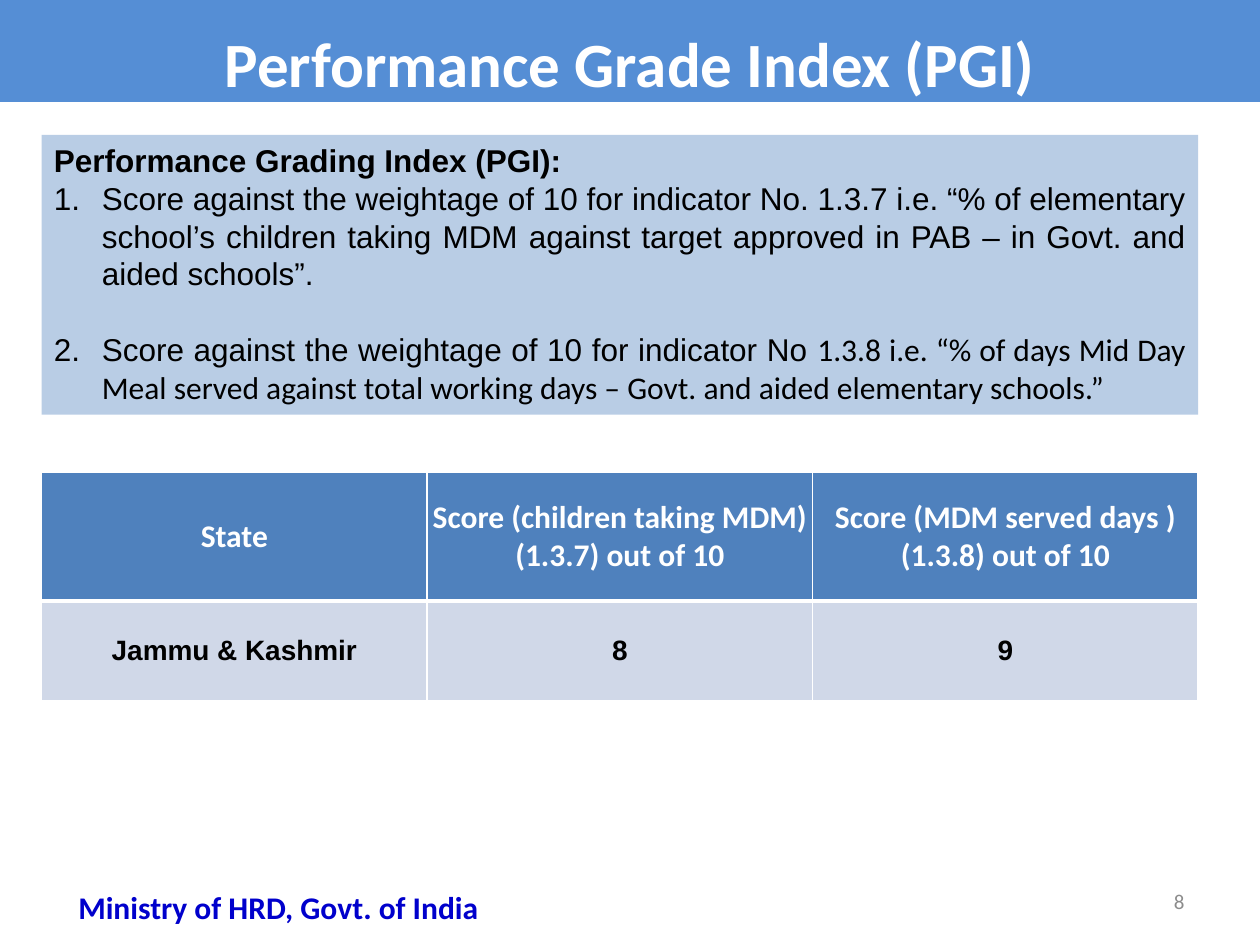
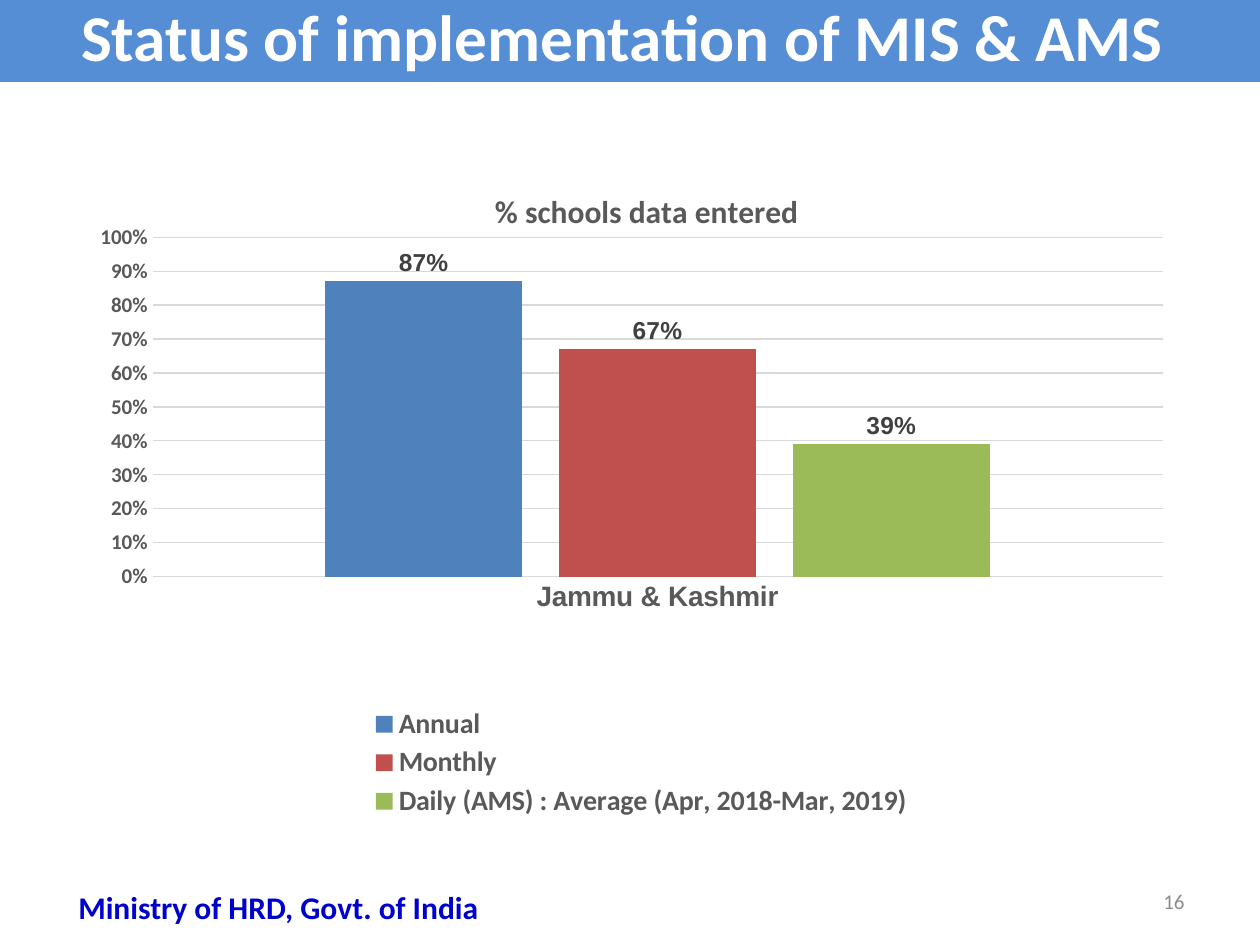
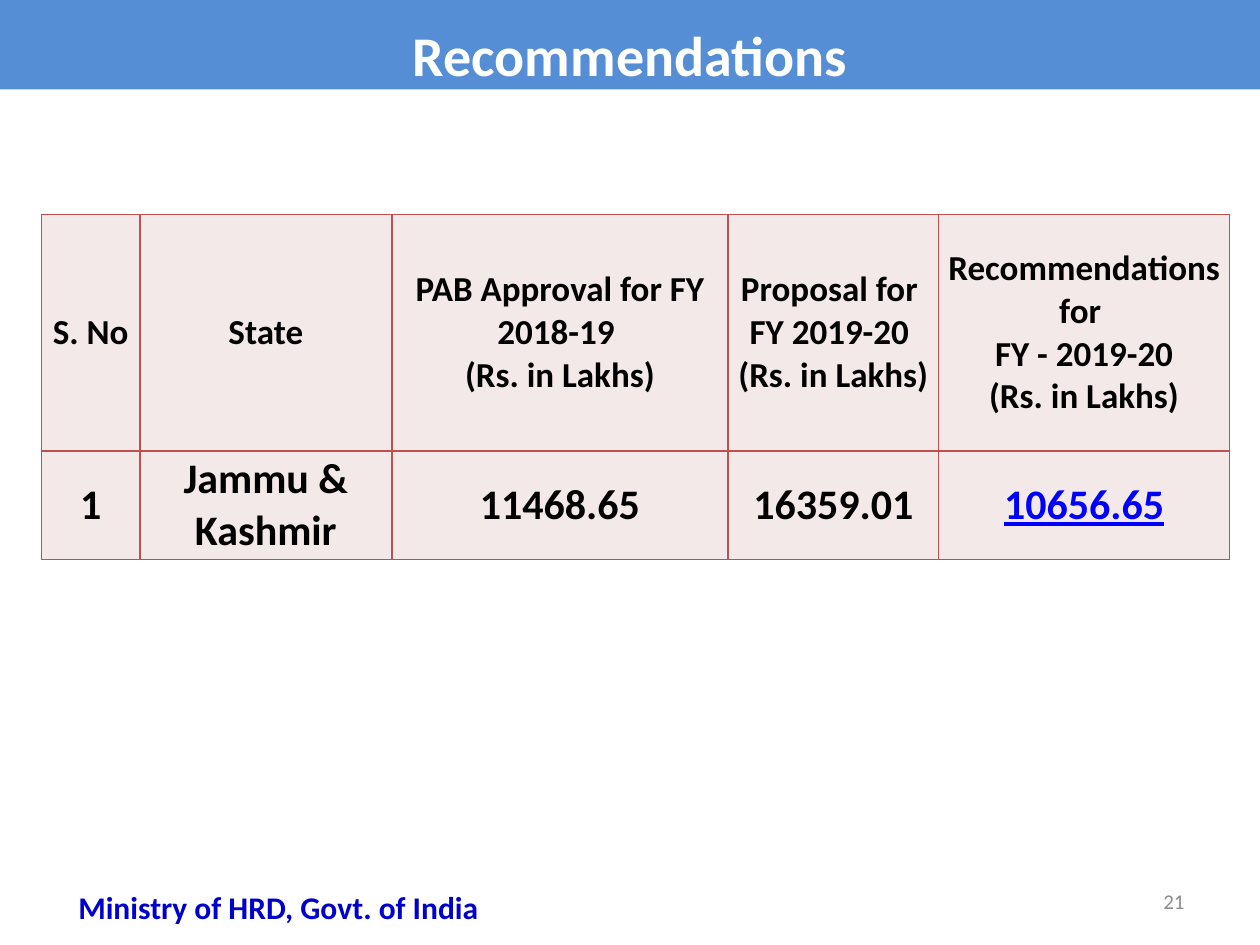
"""Build three slides on school meal scores, data entry and recommendations."""
from dataclasses import dataclass
from typing import Any, NamedTuple

import pptx
import pptx.chart.data
import pptx.dml.color
import pptx.enum.chart
import pptx.enum.shapes
import pptx.enum.text
import pptx.oxml
import pptx.oxml.ns
import pptx.util

COLORS = {
    "band": "558ED5", "panel": "B9CDE5", "white": "FFFFFF", "black": "000000",
    "footer": "0000CC", "number": "8C8C8C", "link": "0000FF",
    "blue": "4F81BD", "red": "C0504D", "green": "9BBB59",
    "score": "D0D8E8", "rose": "F4E9E9",
    "chart_text": "595959", "label": "404040", "grid": "D9D9D9",
}
WIDTH, HEIGHT = pptx.util.Inches(10), pptx.util.Inches(7.5)
ALIGN = pptx.enum.text.PP_ALIGN
ANCHOR = pptx.enum.text.MSO_ANCHOR
TIGHT, ROOMY = 0.72, 5
STATE = "Jammu & Kashmir"


class Box(NamedTuple):
    """Place and size in percent of the slide."""
    left: float
    top: float
    width: float
    height: float


class Style(NamedTuple):
    """Look of a run of text."""
    size: float
    color: str = "black"
    bold: bool = True
    font: str = "Calibri"
    underline: bool = False


class Run(NamedTuple):
    """Text with its style."""
    text: str
    style: Style


@dataclass(frozen=True)
class Paragraph:
    """Runs with their paragraph settings."""
    runs: tuple[Run, ...]
    align: Any = ALIGN.CENTER
    line_spacing: float = 1.0
    space_before: float = 0
    numbered: bool = False


@dataclass(frozen=True)
class Cell:
    """Table cell, one paragraph per line."""
    lines: tuple[str, ...]
    style: Style
    fill: str
    borders: tuple[float, float, float, float] = (1, 1, 1, 1)
    inset: float = TIGHT


@dataclass(frozen=True)
class Series:
    """One column of the chart."""
    name: str
    value: float
    color: str


def across(percent: float) -> int:
    """Turn a share of the slide width into a length."""
    return round(WIDTH * percent / 100)


def down(percent: float) -> int:
    """Turn a share of the slide height into a length."""
    return round(HEIGHT * percent / 100)


def place(box: Box) -> tuple[int, int, int, int]:
    """Turn a box into lengths."""
    return across(box.left), down(box.top), across(box.width), down(box.height)


def rgb(name: str) -> pptx.dml.color.RGBColor:
    """Look up a colour."""
    return pptx.dml.color.RGBColor.from_string(COLORS[name])


def paint(fill: Any, color: str) -> None:
    """Give a fill one solid colour."""
    fill.solid()
    fill.fore_color.rgb = rgb(color)


def apply_style(font: Any, style: Style) -> None:
    """Apply a text style to a font."""
    font.name, font.size, font.bold = style.font, pptx.util.Pt(style.size), style.bold
    font.color.rgb = rgb(style.color)
    if style.underline:
        font.underline = True


def write(frame: Any, paragraphs: list[Paragraph], anchor: Any) -> None:
    """Fill a text frame run by run."""
    frame.word_wrap = True
    frame.vertical_anchor = anchor
    for index, content in enumerate(paragraphs):
        paragraph = frame.add_paragraph() if index else frame.paragraphs[0]
        paragraph.alignment = content.align
        paragraph.line_spacing = content.line_spacing
        paragraph.space_before = pptx.util.Pt(content.space_before)
        if content.numbered:
            properties = paragraph._p.get_or_add_pPr()
            indent = across(3.8)
            properties.set("marL", str(indent))
            properties.set("indent", str(-indent))
            number = pptx.oxml.parse_xml(
                f'<a:buAutoNum {pptx.oxml.ns.nsdecls("a")} type="arabicPeriod"/>')
            properties.append(number)
        for item in content.runs:
            run = paragraph.add_run()
            run.text = item.text
            apply_style(run.font, item.style)


def add_panel(slide: Any, box: Box, color: str, paragraphs: list[Paragraph], anchor: Any) -> None:
    """Draw a filled rectangle with text."""
    shape = slide.shapes.add_shape(pptx.enum.shapes.MSO_SHAPE.RECTANGLE, *place(box))
    shape.shadow.inherit = False
    paint(shape.fill, color)
    shape.line.fill.background()
    write(shape.text_frame, paragraphs, anchor)


def add_label(slide: Any, box: Box, text: str, style: Style, align: Any, anchor: Any) -> None:
    """Draw a line of plain text."""
    shape = slide.shapes.add_textbox(*place(box))
    write(shape.text_frame, [Paragraph((Run(text, style),), align)], anchor)


def start_slide(presentation: Any, title: str, band: Box, size: float,
                number: int, line_spacing: float = 1.0) -> Any:
    """Add a slide with title band, footer and page number."""
    slide = presentation.slides.add_slide(presentation.slide_layouts[6])
    heading = Paragraph((Run(title, Style(size, "white")),), line_spacing=line_spacing)
    add_panel(slide, band, "band", [heading], ANCHOR.MIDDLE)
    add_label(slide, Box(71.7, 92.67, 23.3, 5.33), str(number),
              Style(12, "number", False), ALIGN.RIGHT, ANCHOR.MIDDLE)
    add_label(slide, Box(2.5, 93.33, 39.2, 5.33), "Ministry of HRD, Govt. of India",
              Style(18, "footer"), ALIGN.CENTER, ANCHOR.TOP)
    return slide


def add_borders(cell: Any, widths: tuple[float, ...], color: str) -> None:
    """Draw left, right, top and bottom borders of a cell."""
    properties = cell._tc.get_or_add_tcPr()
    for index, (side, width) in enumerate(zip("LRTB", widths)):
        properties.insert(index, pptx.oxml.parse_xml(
            f'<a:ln{side} {pptx.oxml.ns.nsdecls("a")} w="{pptx.util.Pt(width)}">'
            f'<a:solidFill><a:srgbClr val="{COLORS[color]}"/></a:solidFill></a:ln{side}>'))


def add_table(slide: Any, left: float, top: float, columns: list[float],
              rows: list[float], cells: list[list[Cell]], border: str) -> None:
    """Draw a table from column and row shares."""
    box = Box(left, top, sum(columns), sum(rows))
    table = slide.shapes.add_table(len(rows), len(columns), *place(box)).table
    table.first_row = table.horz_banding = False
    for column, share in zip(table.columns, columns):
        column.width = across(share)
    for row, share, contents in zip(table.rows, rows, cells):
        row.height = down(share)
        for cell, content in zip(row.cells, contents):
            cell.margin_left = cell.margin_right = pptx.util.Pt(content.inset)
            cell.margin_top = cell.margin_bottom = 0
            lines = [Paragraph((Run(line, content.style),)) for line in content.lines]
            write(cell.text_frame, lines, ANCHOR.MIDDLE)
            cell.vertical_anchor = ANCHOR.MIDDLE
            paint(cell.fill, content.fill)
            add_borders(cell, content.borders, border)


def set_layout(chart: Any, part: str, index: int, **shares: float) -> None:
    """Fix the place of a chart part in shares of the chart."""
    parent = chart._chartSpace.xpath(f"c:chart/c:{part}")[0]
    for old in parent.xpath("c:layout"):
        parent.remove(old)
    target = '<c:layoutTarget val="inner"/>' if part == "plotArea" else ""
    modes = "".join(f'<c:{key}Mode val="edge"/>' for key in "xy")
    values = "".join(f'<c:{key} val="{value}"/>' for key, value in shares.items())
    parent.insert(index, pptx.oxml.parse_xml(
        f'<c:layout {pptx.oxml.ns.nsdecls("c")}><c:manualLayout>'
        f"{target}{modes}{values}</c:manualLayout></c:layout>"))


def add_column_chart(slide: Any, box: Box, title: str, series: list[Series]) -> None:
    """Draw the chart of data entered."""
    data = pptx.chart.data.CategoryChartData(number_format="0%")
    data.categories = [STATE]
    for item in series:
        data.add_series(item.name, [item.value])
    chart = slide.shapes.add_chart(
        pptx.enum.chart.XL_CHART_TYPE.COLUMN_CLUSTERED, *place(box), data).chart
    apply_style(chart.font, Style(10, bold=False))

    chart.has_title = True
    run = chart.chart_title.text_frame.paragraphs[0].add_run()
    run.text = title
    apply_style(run.font, Style(18, "chart_text"))
    chart.chart_title.include_in_layout = False
    chart.has_legend = True
    chart.legend.position = pptx.enum.chart.XL_LEGEND_POSITION.BOTTOM
    chart.legend.include_in_layout = False
    apply_style(chart.legend.font, Style(16, "chart_text"))

    values, categories = chart.value_axis, chart.category_axis
    values.minimum_scale, values.maximum_scale, values.major_unit = 0, 1, 0.1
    values.tick_labels.number_format = "0%"
    values.tick_labels.number_format_is_linked = False
    values.format.line.fill.background()
    apply_style(values.tick_labels.font, Style(12, "chart_text"))
    apply_style(categories.tick_labels.font, Style(16, "chart_text", font="Arial"))
    for axis in (values, categories):
        axis.major_tick_mark = pptx.enum.chart.XL_TICK_MARK.NONE
    for line in (values.major_gridlines.format.line, categories.format.line):
        line.color.rgb = rgb("grid")
        line.width = pptx.util.Pt(0.75)

    plot = chart.plots[0]
    plot.gap_width, plot.overlap, plot.vary_by_categories = 176, -19, False
    for column, item in zip(plot.series, series):
        paint(column.format.fill, item.color)
        labels = column.data_labels
        labels.show_value = True
        labels.number_format, labels.number_format_is_linked = "0%", False
        labels.position = pptx.enum.chart.XL_LABEL_POSITION.OUTSIDE_END
        apply_style(labels.font, Style(14, "label", font="Arial"))

    set_layout(chart, "plotArea", 0, x=0.05, y=0.12, w=0.93, h=0.51)
    set_layout(chart, "title", 1, x=0.36, y=0.04)
    set_layout(chart, "legend", 1, x=0.23, y=0.82, w=0.54, h=0.18)


def build_index_slide(presentation: Any) -> None:
    """Build the grade index slide."""
    slide = start_slide(presentation, "Performance Grade Index (PGI)",
                        Box(0, -0.8, 100, 11.6), 36, 8, 1.4)
    plain = Style(18, bold=False, font="Arial")
    add_panel(slide, Box(3.3, 14.27, 91.8, 29.6), "panel", [
        Paragraph((Run("Performance Grading Index (PGI): ", Style(18, font="Arial")),),
                  ALIGN.JUSTIFY),
        Paragraph((Run("Score against the weightage of 10 for indicator No. 1.3.7 i.e. "
                       "“% of elementary school’s children taking MDM against target "
                       "approved in PAB – in Govt. and aided schools”.", plain),),
                  ALIGN.JUSTIFY, numbered=True),
        Paragraph((Run("Score against the weightage of 10 for indicator No ", plain),
                   Run("1.3.8 i.e. “% of days Mid Day Meal served against total working "
                       "days – Govt. and aided elementary schools.”", Style(18, bold=False))),
                  ALIGN.JUSTIFY, space_before=21.5, numbered=True),
    ], ANCHOR.TOP)
    headings = [("State",),
                ("Score (children taking MDM)", "(1.3.7) out of 10"),
                ("Score (MDM served days )", "(1.3.8) out of 10")]
    cells = [
        [Cell(lines, Style(18, "white"), "blue", (1, 1, 1, 3)) for lines in headings],
        [Cell((text,), Style(16, font="Arial"), "score", (1, 1, 3, 1))
         for text in (STATE, "8", "9")],
    ]
    add_table(slide, 3.3, 50, [30.6] * 3, [13.6, 10.53], cells, "white")


def build_status_slide(presentation: Any) -> None:
    """Build the data entry slide."""
    slide = start_slide(presentation, "Status of implementation of MIS & AMS ",
                        Box(0, -1.07, 100, 9.73), 37.3, 16)
    add_column_chart(slide, Box(7.8, 16.67, 86.2, 70.4), "% schools data entered", [
        Series("Annual", 0.87, "blue"),
        Series("Monthly", 0.67, "red"),
        Series("Daily (AMS) : Average (Apr, 2018-Mar, 2019)", 0.39, "green"),
    ])


def build_recommendations_slide(presentation: Any) -> None:
    """Build the recommendations slide."""
    slide = start_slide(presentation, "Recommendations",
                        Box(0, -0.93, 100, 10.4), 32, 21, 1.4)
    unit = "(Rs. in Lakhs)"
    headings = [("S. No",), ("State",),
                ("PAB Approval for FY 2018-19 ", unit),
                ("Proposal for ", "FY 2019-20 ", unit),
                ("Recommendations for ", "FY - 2019-20", unit)]
    figure = Style(24)
    cells = [
        [Cell(lines, Style(20), "rose", inset=ROOMY) for lines in headings],
        [Cell(("1",), figure, "rose", inset=ROOMY),
         *(Cell((text,), figure, "rose") for text in (STATE, "11468.65", "16359.01")),
         Cell(("10656.65",), Style(24, "link", underline=True), "rose")],
    ]
    add_table(slide, 3.3, 22.67, [7.8, 20, 26.7, 16.7, 23.1], [25.07, 11.47], cells, "red")


def main() -> None:
    """Build and save the presentation."""
    presentation = pptx.Presentation()
    presentation.slide_width, presentation.slide_height = WIDTH, HEIGHT
    build_index_slide(presentation)
    build_status_slide(presentation)
    build_recommendations_slide(presentation)
    presentation.save("out.pptx")


if __name__ == "__main__":
    main()
